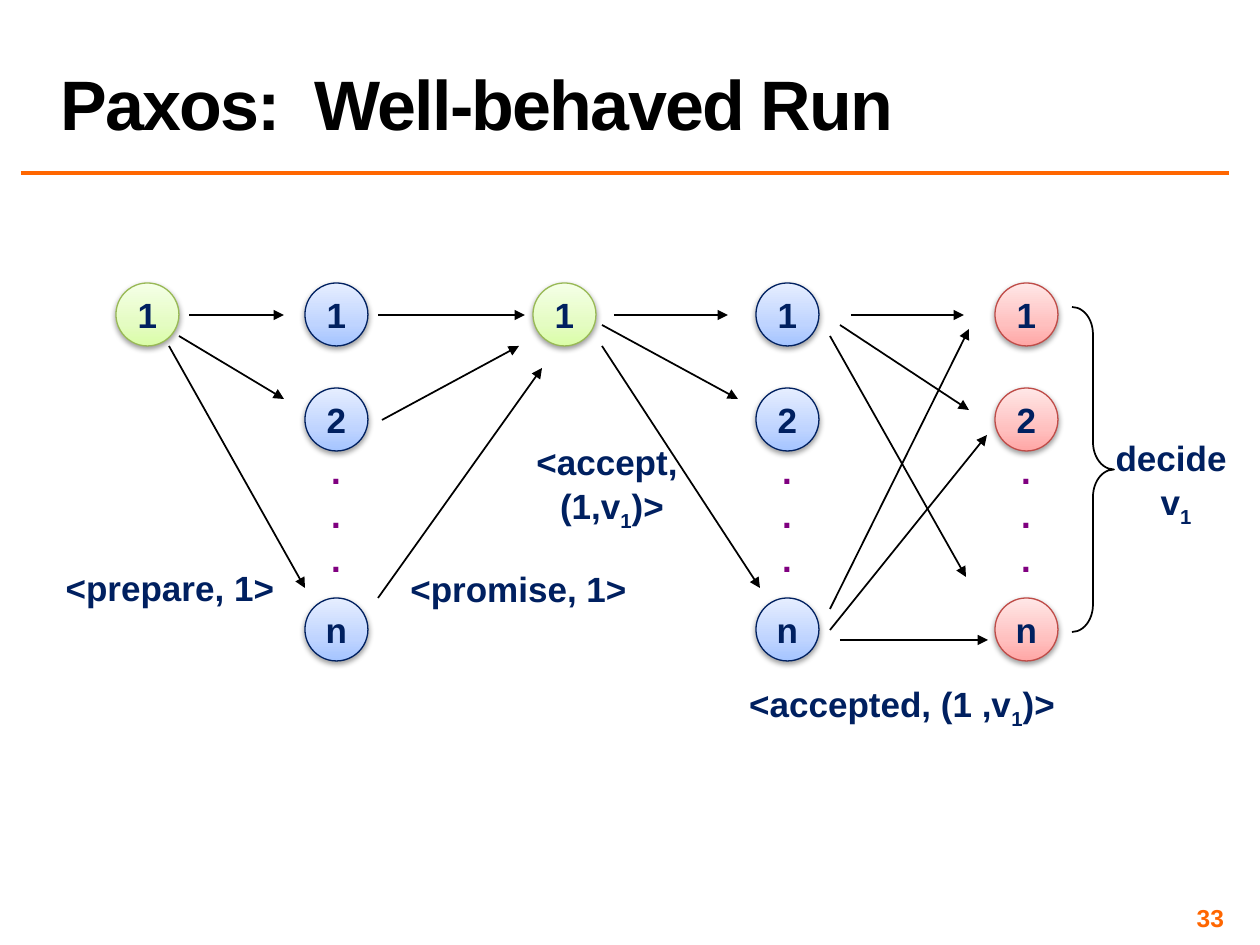
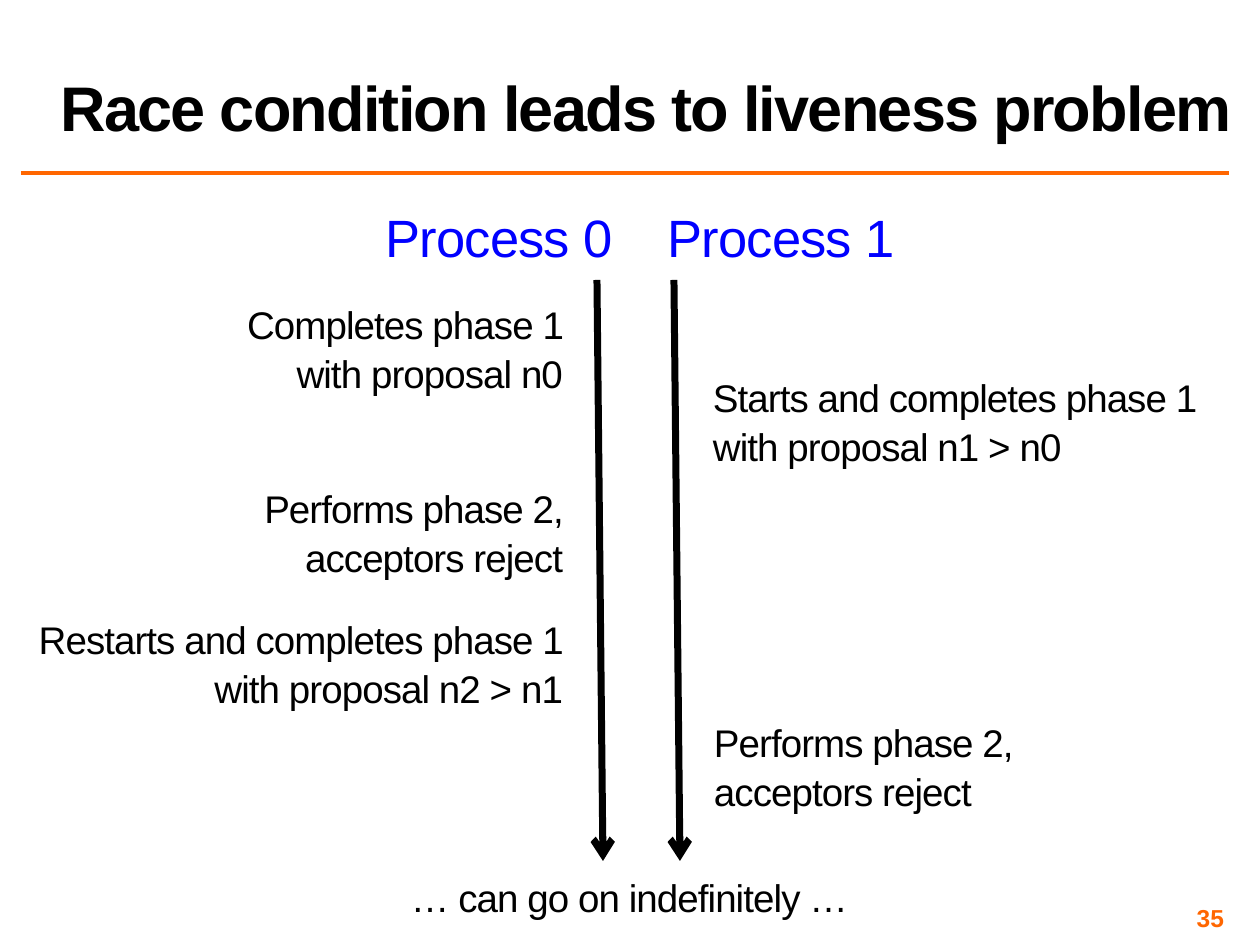
"""Build two slides on Paxos: a well-behaved run and its liveness race."""
from lxml import etree
from pptx import Presentation
from pptx import util as u
from pptx.dml.color import RGBColor
from pptx.enum import shapes, text
from pptx.oxml import ns

PX = 914400 / 126
FONT = "Arial"
BLACK = RGBColor(0x00, 0x00, 0x00)
ORANGE = RGBColor(0xFF, 0x66, 0x00)
NAVY = RGBColor(0x00, 0x20, 0x60)
PURPLE = RGBColor(0x80, 0x00, 0x80)
BLUE = RGBColor(0x00, 0x00, 0xFF)
LEFT, CENTER, RIGHT = text.PP_ALIGN.LEFT, text.PP_ALIGN.CENTER, text.PP_ALIGN.RIGHT
TOP, MIDDLE, BOTTOM = (text.MSO_ANCHOR.TOP, text.MSO_ANCHOR.MIDDLE,
                       text.MSO_ANCHOR.BOTTOM)

PALETTES = {
    "proposer": (RGBColor(0x98, 0xB9, 0x55), ("DAFDA7", "E4FCC2", "F5FFE7")),
    "acceptor": (NAVY, ("A4C4FF", "BFD4FF", "E6EEFF")),
    "learner": (RGBColor(0xBF, 0x4C, 0x48), ("FFA6A5", "FFC0BF", "FFE7E7")),
}
GRADIENT_POSITIONS = (0, 35, 100)
NODE_SIZE = 63
NODE_ROWS = {"1": 283, "2": 388, "n": 598}
NODE_COLUMNS = [
    (116, "proposer", "1"),
    (305, "acceptor", "12n"),
    (533, "proposer", "1"),
    (756, "acceptor", "12n"),
    (995, "learner", "12n"),
]
MESSAGES = {
    "prepare": [(189, 315, 284, 315), (179, 336, 284, 399), (169, 346, 305, 588)],
    "promise": [(378, 315, 525, 315), (382, 420, 519, 346), (378, 598, 542, 368)],
    "accept": [(614, 315, 728, 315), (602, 325, 738, 399), (602, 346, 760, 588)],
    "accepted": [(851, 315, 964, 315), (840, 325, 969, 410), (830, 336, 966, 577),
                 (830, 609, 969, 329), (830, 630, 987, 435), (840, 640, 988, 640)],
}
RUN_LABELS = [
    ((52, 558, 236, 55), ["<prepare, 1>"]),
    ((397, 559, 243, 55), ["<promise, 1>"]),
    ((523, 432, 178, 97), ["<accept, ", ("(1,v", "1", ")>")]),
    ((735, 674, 334, 55), [("<accepted, (1 ,v", "1", ")>")]),
    ((1077, 428, 198, 97), ["decide ", ("v", "1")]),
]
BRACE = (1072, 307, 42, 325)

PROCESSES = [("Process 0", 320, 597), ("Process 1", 602, 674)]
TIMELINE_TOP, TIMELINE_BOTTOM, TIMELINE_DRIFT = 280, 861, 6
STEPS = [
    ((210, 294, 358, 166), RIGHT, "Completes phase 1 with proposal n0"),
    ((708, 367, 499, 164), LEFT, "Starts and completes phase 1 with proposal n1 > n0"),
    ((194, 478, 374, 117), RIGHT, "Performs phase 2, acceptors reject"),
    ((30, 609, 538, 130), RIGHT, "Restarts and completes phase 1 with proposal n2 > n1"),
    ((709, 712, 426, 118), LEFT, "Performs phase 2, acceptors reject"),
    ((359, 867, 541, 57), CENTER, "… can go on indefinitely …"),
]


def px(*lengths):
    return [u.Emu(round(length * PX)) for length in lengths]


def write(shape, lines, size, color, align=LEFT, bold=False, anchor=TOP,
          inset=None, wrap=True, leading=1.05, tracking=0):
    """Fill a shape; a tuple line alternates normal and subscript spans."""
    frame = shape.text_frame
    frame.word_wrap = wrap
    frame.vertical_anchor = anchor
    if inset is not None:
        frame.margin_left = frame.margin_right = px(inset)[0]
        frame.margin_top = frame.margin_bottom = px(inset)[0]
    for index, line in enumerate(lines):
        para = frame.add_paragraph() if index else frame.paragraphs[0]
        para.alignment = align
        para.line_spacing = leading
        font = para.font
        font.name, font.size, font.bold = FONT, u.Pt(size), bold
        font.color.rgb = color
        if tracking:
            font._rPr.set("spc", str(round(tracking * 100)))
        for part, words in enumerate((line,) if isinstance(line, str) else line):
            span = para.add_run()
            span.text = words
            if part % 2:
                span.font._rPr.set("baseline", "-25000")


def add_text(page, place, lines, size, color, **style):
    write(page.shapes.add_textbox(*px(*place)), lines, size, color, **style)


def add_line(page, ends, color, width, head=None):
    line = page.shapes.add_connector(shapes.MSO_CONNECTOR.STRAIGHT, *px(*ends))
    line.line.color.rgb = color
    line.line.width = u.Pt(width)
    if head:
        etree.SubElement(line.line._get_or_add_ln(), ns.qn("a:tailEnd"), type=head)
    etree.SubElement(line._element.spPr, ns.qn("a:effectLst"))


def add_node(page, left, role, name):
    place = px(left, NODE_ROWS[name], NODE_SIZE, NODE_SIZE)
    node = page.shapes.add_shape(shapes.MSO_SHAPE.OVAL, *place)
    outline, colors = PALETTES[role]
    node.fill.gradient()
    node.fill.gradient_angle = 90
    stops = node._element.spPr.find(".//" + ns.qn("a:gsLst"))
    for stop in list(stops):
        stops.remove(stop)
    for position, color in zip(GRADIENT_POSITIONS, colors):
        stop = etree.SubElement(stops, ns.qn("a:gs"), pos=str(position * 1000))
        etree.SubElement(stop, ns.qn("a:srgbClr"), val=color)
    node.line.color.rgb = outline
    node.line.width = u.Pt(0.75)
    node.shadow.inherit = False
    effects = node._element.spPr.find(ns.qn("a:effectLst"))
    shadow = etree.SubElement(effects, ns.qn("a:outerShdw"), blurRad="40000",
                              dist="20000", dir="5400000", rotWithShape="0")
    shade = etree.SubElement(shadow, ns.qn("a:srgbClr"), val="000000")
    etree.SubElement(shade, ns.qn("a:alpha"), val="38000")
    write(node, [name], 20, NAVY, align=CENTER, bold=True, anchor=MIDDLE,
          wrap=False, leading=1.0)


def add_page(deck, title, title_size, number):
    page = deck.slides.add_slide(deck.slide_layouts[6])
    add_line(page, (21, 173, 1229, 173), ORANGE, 2)
    add_text(page, (48, 3, 1212, 147), [title], title_size, BLACK, bold=True,
             anchor=BOTTOM, leading=0.8, tracking=-1)
    add_text(page, (935, 903, 294, 29), [number], 14, ORANGE, align=RIGHT,
             bold=True, anchor=MIDDLE, inset=5, leading=1.0)
    return page


def build_run(deck):
    page = add_page(deck, "Paxos:  Well-behaved Run", 40, "33")
    for left, role, names in NODE_COLUMNS:
        for name in names:
            add_node(page, left, role, name)
        if "n" in names:
            add_text(page, (left + 10, 441, 42, 139), ["."] * 3, 20, PURPLE,
                     align=CENTER, bold=True)
    for arrows in MESSAGES.values():
        for ends in arrows:
            add_line(page, ends, BLACK, 1, "triangle")
    brace = page.shapes.add_shape(shapes.MSO_SHAPE.RIGHT_BRACE, *px(*BRACE))
    brace.adjustments[0] = 0.65
    brace.fill.background()
    brace.line.color.rgb = BLACK
    brace.line.width = u.Pt(1)
    brace.shadow.inherit = False
    for place, lines in RUN_LABELS:
        add_text(page, place, lines, 20, NAVY, align=CENTER, bold=True, wrap=False)


def build_race(deck):
    page = add_page(deck, "Race condition leads to liveness problem", 36, "35")
    for name, left, start in PROCESSES:
        add_text(page, (left, 197, 358, 81), [name], 30, BLUE, align=CENTER,
                 inset=5, tracking=-0.5)
        ends = (start, TIMELINE_TOP, start + TIMELINE_DRIFT, TIMELINE_BOTTOM)
        add_line(page, ends, BLACK, 4, "arrow")
    for place, align, words in STEPS:
        add_text(page, place, [words], 22, BLACK, align=align, inset=5, tracking=-0.5)


def main():
    deck = Presentation()
    deck.slide_width, deck.slide_height = px(1260, 945)
    build_run(deck)
    build_race(deck)
    deck.save("out.pptx")


if __name__ == "__main__":
    main()
